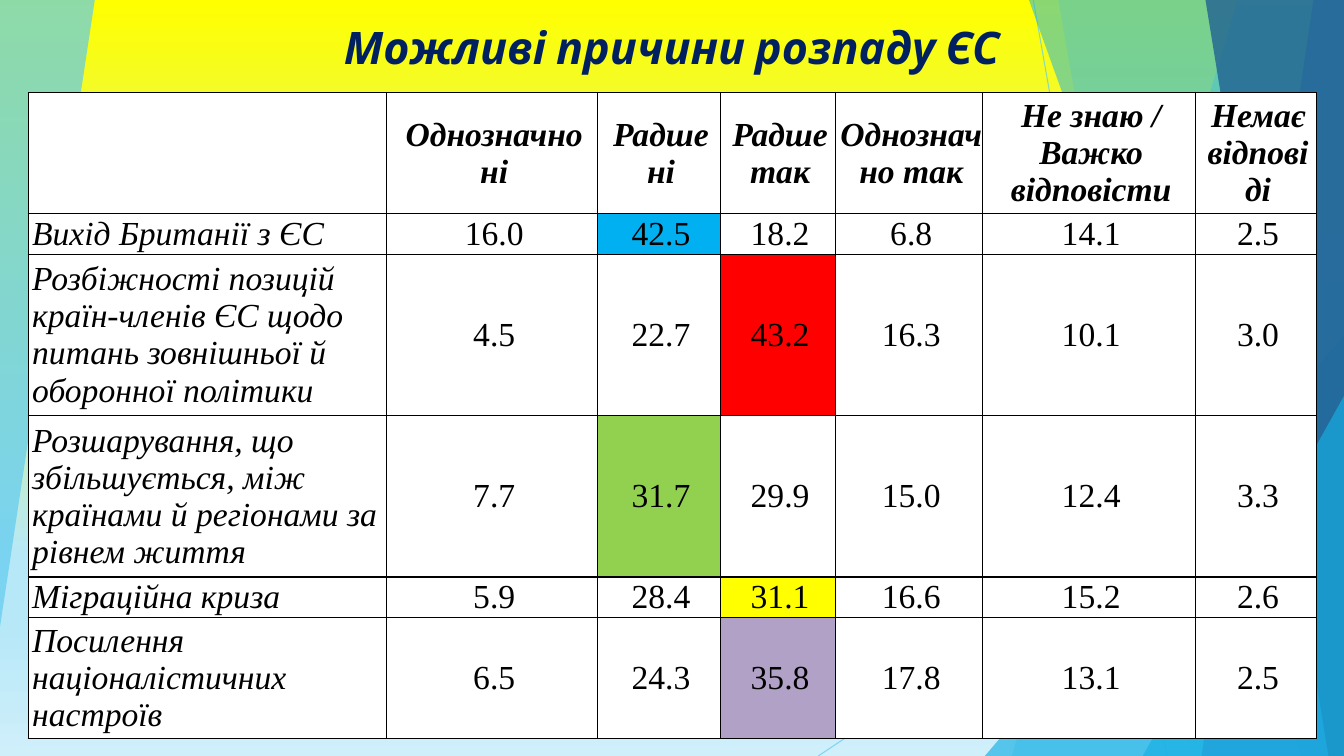
"""Builds a slide with a survey table on possible causes of an EU break-up."""
from lxml.etree import SubElement
from pptx import Presentation
from pptx.dml.color import RGBColor
from pptx.enum.shapes import MSO_CONNECTOR, MSO_SHAPE
from pptx.enum.text import MSO_ANCHOR, MSO_AUTO_SIZE, PP_ALIGN
from pptx.oxml.ns import qn
from pptx.util import Cm, Pt

HUES = {
    "white": "FFFFFF", "black": "000000", "navy": "002060",
    "sky": "5FCBEF", "azure": "17B0E4", "steel": "2E83C3", "deep": "226292",
    "pale": "B7E8F8", "mist": "CFEFFA", "yellow": "FFFF00", "blue": "00B0F0",
    "red": "FF0000", "green": "92D050", "mauve": "B2A1C7",
}
WIDE, HIGH = 33.87, 19.05


def tint(fill, hue, alpha=100):
    fill.solid()
    fill.fore_color.rgb = RGBColor.from_string(HUES[hue])
    if alpha < 100:
        color = fill._xPr.find(qn("a:solidFill"))[0]
        SubElement(color, qn("a:alpha"), val=str(alpha * 1000))


def style(para, size, name, hue, bold, italic):
    font = para.font
    font.size, font.name, font.bold, font.italic = Pt(size), name, bold, italic
    font.color.rgb = RGBColor.from_string(HUES[hue])


deck = Presentation()
deck.slide_width, deck.slide_height = Cm(WIDE), Cm(HIGH)
slide = deck.slides.add_slide(deck.slide_layouts[6])
shapes = slide.shapes

back = slide.background.fill
back.gradient()
back.gradient_angle = 270
stops = slide._element.find(".//" + qn("a:gsLst"))
for stop in list(stops):
    stops.remove(stop)
for place, hue in [(0, "yellow"), (74, "pale"), (83, "pale"), (100, "mist")]:
    stop = SubElement(stops, qn("a:gs"), pos=str(place * 1000))
    SubElement(stop, qn("a:srgbClr"), val=HUES[hue])

RAYS = [
    ((26.04, 0), (29.41, HIGH)),
    ((WIDE, 10.24), (20.62, HIGH)),
]
for start, end in RAYS:
    ray = shapes.add_connector(MSO_CONNECTOR.STRAIGHT, *map(Cm, start + end))
    ray.line.width = Pt(0.75)
    tint(ray.line.fill, "sky", 70)
    SubElement(ray._element.spPr, qn("a:effectLst"))


FACETS = [
    ("sky", 70, [(0, 0), (2.39, 0), (0, 15.8)]),
    ("sky", 36, [(31.19, 0), (WIDE, 0), (WIDE, HIGH), (25.5, HIGH)]),
    ("sky", 20, [(26.67, 0), (WIDE, 0), (WIDE, HIGH), (30.02, HIGH)]),
    ("azure", 66, (24.82, 8.46)),
    ("azure", 50, [(25.93, 0), (WIDE, 0), (WIDE, HIGH), (32.79, HIGH)]),
    ("steel", 70, [(33.1, 0), (WIDE, 0), (WIDE, HIGH), (30.28, HIGH)]),
    ("deep", 80, [(30.38, 0), (WIDE, 0), (WIDE, HIGH), (33.48, HIGH)]),
    ("azure", 66, (28.8, 9.98)),
]
for hue, alpha, form in FACETS:
    if isinstance(form, tuple):
        left, top = form
        facet = shapes.add_shape(MSO_SHAPE.ISOSCELES_TRIANGLE, Cm(left), Cm(top),
                                 Cm(WIDE - left), Cm(HIGH - top))
        facet.adjustments[0] = 1
    else:
        first, *rest = [(Cm(x), Cm(y)) for x, y in form]
        path = shapes.build_freeform(*first)
        path.add_line_segments(rest, close=True)
        facet = path.convert_to_shape()
    facet.shadow.inherit = False
    facet.line.fill.background()
    tint(facet.fill, hue, alpha)

title = shapes.add_textbox(0, Cm(0.38), Cm(WIDE), Cm(1.62)).text_frame
title.word_wrap = True
title.auto_size = MSO_AUTO_SIZE.SHAPE_TO_FIT_TEXT
title.text = "Можливі причини розпаду ЄС"
title.paragraphs[0].alignment = PP_ALIGN.CENTER
style(title.paragraphs[0], 32, "Cabin", "navy", True, True)

ROWS = [
    ("", "Однозначно ні", "Радше ні", "Радше так", "Однозначно так",
     "Не знаю / Важко відповісти", "Немає відповіді"),
    ("Вихід Британії з ЄС", "16.0", "42.5", "18.2", "6.8", "14.1", "2.5"),
    ("Розбіжності позицій країн-членів ЄС щодо питань зовнішньої й оборонної політики",
     "4.5", "22.7", "43.2", "16.3", "10.1", "3.0"),
    ("Розшарування, що збільшується, між країнами й регіонами за рівнем життя",
     "7.7", "31.7", "29.9", "15.0", "12.4", "3.3"),
    ("Міграційна криза", "5.9", "28.4", "31.1", "16.6", "15.2", "2.6"),
    ("Посилення націоналістичних настроїв",
     "6.5", "24.3", "35.8", "17.8", "13.1", "2.5"),
]
MARKS = {(1, 2): "blue", (2, 3): "red", (3, 2): "green",
         (4, 3): "yellow", (5, 3): "mauve"}
WIDTHS = [9.04, 5.31, 3.1, 2.9, 3.71, 5.36, 3.05]
HEIGHTS = [3.05, 1.02, 4.06, 4.06, 1.02, 3.05]

grid = shapes.add_table(len(ROWS), len(WIDTHS), Cm(0.71), Cm(2.34),
                        Cm(sum(WIDTHS)), Cm(sum(HEIGHTS))).table
grid.first_row = grid.horz_banding = False
for column, width in zip(grid.columns, WIDTHS):
    column.width = Cm(width)
for row, height in zip(grid.rows, HEIGHTS):
    row.height = Cm(height)

for r, row in enumerate(ROWS):
    for c, text in enumerate(row):
        cell = grid.cell(r, c)
        cell.text = text
        cell.vertical_anchor = MSO_ANCHOR.MIDDLE
        cell.margin_left = Cm(0.1)
        cell.margin_right = cell.margin_top = cell.margin_bottom = 0
        para = cell.text_frame.paragraphs[0]
        para.alignment = PP_ALIGN.CENTER if r == 0 or c else PP_ALIGN.LEFT
        style(para, 24, "Times New Roman", "black", r == 0, r == 0 or c == 0)
        props = cell._tc.get_or_add_tcPr()
        for side in ("lnL", "lnR", "lnT", "lnB"):
            edge = SubElement(props, qn("a:" + side), w=str(Pt(1)))
            ink = SubElement(edge, qn("a:solidFill"))
            SubElement(ink, qn("a:srgbClr"), val=HUES["black"])
        tint(cell.fill, MARKS.get((r, c), "white"))

deck.save("out.pptx")
